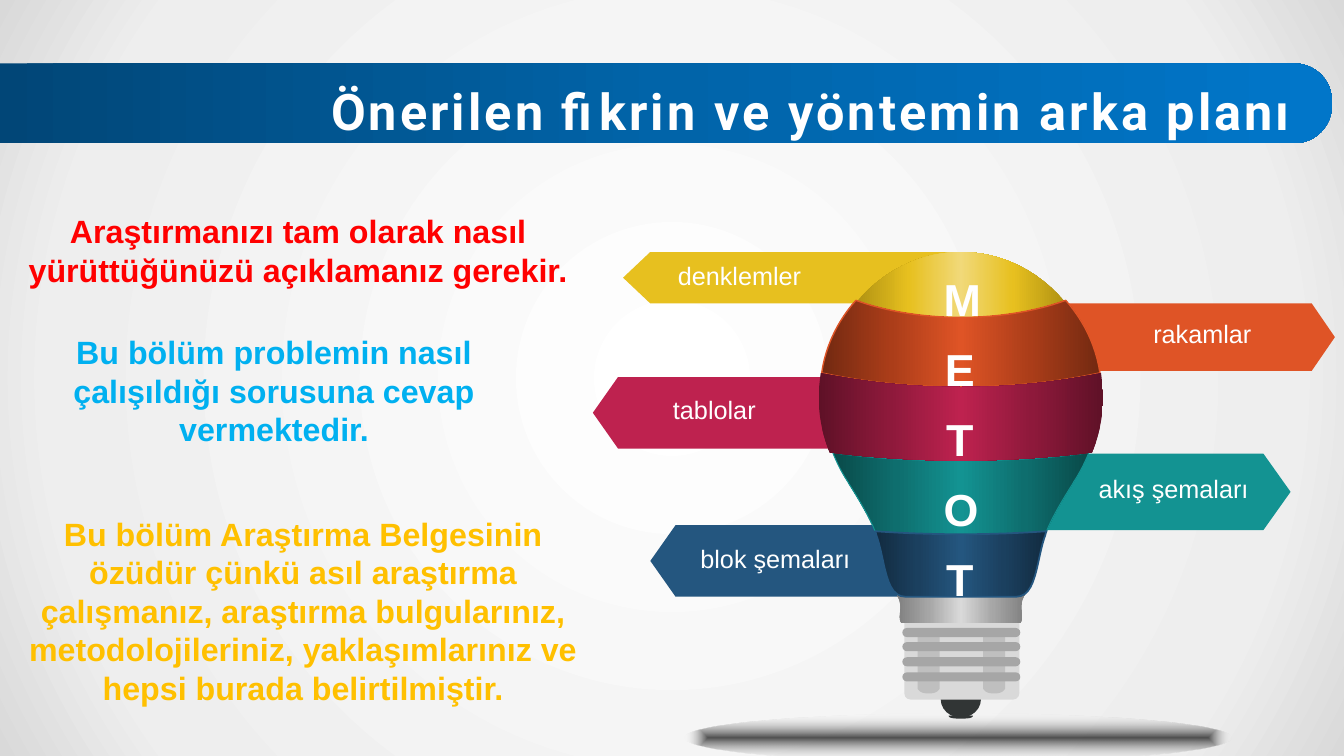
from dataclasses import dataclass
from itertools import pairwise
from typing import Any

from lxml import etree
from pptx import Presentation
from pptx import util as u
from pptx.dml.color import RGBColor
from pptx.enum import shapes, text
from pptx.oxml import ns

SCALE = 9144
AXIS = 953
WHITE = "FFFFFF"
Point = tuple[int, int]
Box = tuple[int, int, int, int]


@dataclass
class Stop:
    """One gradient stop in percent."""
    position: int
    color: str
    opacity: int = 100


@dataclass
class Tag:
    """An arrow label whose tip points away from the bulb."""
    caption: str
    color: str
    tip: int
    shoulder: int
    inner: int
    top: int
    bottom: int
    caption_box: Box


@dataclass
class Band:
    """A glossy bulb band: edge, middle and centre colours and its left half outline."""
    colors: tuple[str, str, str]
    half: list[Point]
    line_width: float = 0


@dataclass
class Statement:
    """A bold coloured paragraph on the left."""
    words: str
    color: str
    box: Box


TAGS = [
    Tag("denklemler", "E7C01F", 618, 645, 958, 250, 301, (625, 253, 217, 40)),
    Tag("tablolar", "BE224F", 588, 613, 876, 374, 445, (600, 386, 217, 40)),
    Tag("blok şemaları", "24567F", 645, 670, 894, 521, 592, (654, 534, 230, 40)),
    Tag("akış şemaları", "139392", 1280, 1253, 1018, 450, 526, (1049, 465, 230, 40)),
    Tag("rakamlar ", "DF5426", 1324, 1301, 1004, 301, 368, (1081, 311, 230, 40)),
]
STATEMENTS = [
    Statement("Bu bölüm problemin nasıl çalışıldığı sorusuna cevap vermektedir.",
              "00B0F0", (2, 325, 540, 126)),
    Statement("Araştırmanızı tam olarak nasıl yürüttüğünüzü açıklamanız gerekir.",
              "FF0000", (2, 205, 588, 88)),
    Statement("Bu bölüm Araştırma Belgesinin özüdür çünkü asıl araştırma çalışmanız, "
              "araştırma bulgularınız, metodolojileriniz, yaklaşımlarınız ve hepsi "
              "burada belirtilmiştir.", "FFC000", (1, 505, 600, 204)),
]
CAP = Band(("808080", "A6A6A6", "D9D9D9"), [
    (953, 592), (941, 592), (903, 590), (891, 587), (891, 587), (888, 588), (890, 592),
    (890, 592), (892, 593), (893, 601), (893, 609), (891, 614), (894, 618),
    (914, 618), (934, 618), (953, 618)])
BANDS = [
    Band(("B19313", "E7C01F", "F1D979"), [
        (953, 250), (911, 250), (875, 270), (850, 299), (877, 310), (914, 315), (953, 315)]),
    Band(("094A49", "0E6E6E", "139392"), [
        (953, 457), (909, 457), (866, 455), (826, 449), (830, 459), (835, 469), (841, 478),
        (841, 479), (859, 505), (868, 527), (896, 529), (925, 530), (953, 530)], 0.75),
    Band(("722911", "AB3D19", "DF5426"), [
        (953, 315), (913, 315), (876, 308), (849, 298), (832, 317), (819, 342), (815, 370),
        (856, 379), (903, 384), (953, 384)], 1),
    Band(("5F1127", "8E193B", "BE224F"), [
        (953, 384), (903, 384), (856, 379), (814, 370), (813, 378), (812, 386), (812, 394),
        (812, 414), (816, 432), (823, 449), (864, 454), (908, 457), (953, 457)]),
    Band(("122B40", "1B405F", "24567F"), [
        (953, 530), (925, 530), (896, 529), (868, 527), (869, 529), (869, 531), (870, 533),
        (878, 557), (878, 592), (898, 592), (916, 592), (935, 592), (953, 592)], 1.25),
]
CONTACT = [(953, 710), (949, 710), (945, 710), (941, 710), (941, 712), (944, 713), (953, 713)]
COLUMN = [(921, 628), (917, 628), (910, 628), (910, 630), (910, 650), (910, 670), (910, 683),
          (912, 687), (916, 688), (921, 688)]


def px(length: float) -> u.Emu:
    """Turn px into EMU."""
    return u.Emu(round(length * SCALE))


def rgb(color: str) -> RGBColor:
    """Turn a hex string into a colour."""
    return RGBColor.from_string(color)


def set_gradient(fill: Any, element: Any, stops: list[Stop], angle: int = 0,
                 spread: str = "") -> None:
    """Fill with a linear gradient, or one that spreads from the centre."""
    fill.gradient()
    gradient = next(element.iter(ns.qn("a:gradFill")))
    for child in list(gradient):
        gradient.remove(child)
    stop_list = etree.SubElement(gradient, ns.qn("a:gsLst"))
    for stop in stops:
        entry = etree.SubElement(stop_list, ns.qn("a:gs"), pos=str(stop.position * 1000))
        color = etree.SubElement(entry, ns.qn("a:srgbClr"), val=stop.color)
        if stop.opacity < 100:
            etree.SubElement(color, ns.qn("a:alpha"), val=str(stop.opacity * 1000))
    if spread:
        route = etree.SubElement(gradient, ns.qn("a:path"), {"path": spread})
        etree.SubElement(route, ns.qn("a:fillToRect"), dict.fromkeys("ltrb", "50000"))
    else:
        etree.SubElement(gradient, ns.qn("a:lin"), ang=str(angle * 60000), scaled="0")


def finish(shape: Any, color: str = "") -> Any:
    """Drop shadow and line, and set a plain fill if given."""
    shape.shadow.inherit = False
    shape.line.fill.background()
    if color:
        shape.fill.solid()
        shape.fill.fore_color.rgb = rgb(color)
    return shape


def add_preset(canvas: Any, kind: Any, box: Box, color: str = "",
               adjustments: tuple[float, ...] = ()) -> Any:
    """Add a preset shape."""
    shape = canvas.add_shape(kind, *map(px, box))
    for index, value in enumerate(adjustments):
        shape.adjustments[index] = value
    return finish(shape, color)


def add_outline(canvas: Any, points: list[tuple[float, float]], color: str = "") -> Any:
    """Add a closed polygon."""
    corners = [(px(x), px(y)) for x, y in points]
    builder = canvas.build_freeform(*corners[0], scale=1.0)
    builder.add_line_segments(corners[1:], close=True)
    return finish(builder.convert_to_shape(), color)


def mirrored_curve(half: list[Point], axis: int = AXIS, steps: int = 12) -> list[tuple[float, float]]:
    """Mirror a half outline of cubic curves and trace it with short lines."""
    controls = half + [(2 * axis - x, y) for x, y in reversed(half[:-1])]
    traced: list[tuple[float, float]] = [controls[0]]
    for start, end in pairwise(range(0, len(controls), 3)):
        for step in range(1, steps + 1):
            t = step / steps
            weights = ((1 - t) ** 3, 3 * t * (1 - t) ** 2, 3 * t * t * (1 - t), t ** 3)
            x, y = (sum(w * c for w, c in zip(weights, axis_values))
                    for axis_values in zip(*controls[start:end + 1]))
            traced.append((x, y))
    return traced


def add_words(canvas: Any, box: Box, lines: list[str], size: int, color: str = WHITE,
              bold: bool = False, font: str = "Arial",
              align: Any = text.PP_ALIGN.CENTER) -> Any:
    """Add a text box with one run per line."""
    shape = canvas.add_textbox(*map(px, box))
    frame = shape.text_frame
    frame.word_wrap = True
    frame.auto_size = text.MSO_AUTO_SIZE.SHAPE_TO_FIT_TEXT
    for index, line in enumerate(lines):
        paragraph = frame.add_paragraph() if index else frame.paragraphs[0]
        paragraph.alignment = align
        run = paragraph.add_run()
        run.text = line
        run.font.name, run.font.size, run.font.bold = font, u.Pt(size), bold
        run.font.color.rgb = rgb(color)
    return frame


def add_tag(canvas: Any, tag: Tag) -> None:
    """Draw an arrow label with its caption."""
    add_outline(canvas, [(tag.inner, tag.top), (tag.shoulder, tag.top),
                         (tag.tip, (tag.top + tag.bottom) / 2),
                         (tag.shoulder, tag.bottom), (tag.inner, tag.bottom)], tag.color)
    add_words(canvas, tag.caption_box, [tag.caption], 18)


def add_band(canvas: Any, band: Band) -> None:
    """Draw a glossy band, dark at both edges."""
    shape = add_outline(canvas, mirrored_curve(band.half))
    edge, middle, centre = band.colors
    stops = [Stop(25 * i, c) for i, c in enumerate((edge, middle, centre, middle, edge))]
    set_gradient(shape.fill, shape.element, stops)
    if band.line_width:
        shape.line.color.rgb = rgb(centre)
        shape.line.width = u.Pt(band.line_width)


def add_title(canvas: Any) -> None:
    """Draw the banner and the title on it."""
    banner = add_preset(canvas, shapes.MSO_SHAPE.ROUND_2_SAME_RECTANGLE,
                        (621, -558, 79, 1321), adjustments=(0.47, 0))
    banner.rotation = 90
    set_gradient(banner.fill, banner.element,
                 [Stop(0, "014677"), Stop(50, "0164A9"), Stop(100, "0176C9")], 270)
    frame = add_words(canvas, (56, 74, 1225, 71), ["Önerilen fikrin ve yöntemin arka planı"],
                      36, bold=True, font="Roboto", align=text.PP_ALIGN.RIGHT)
    frame.margin_left = frame.margin_right = 0
    frame.vertical_anchor = text.MSO_ANCHOR.MIDDLE
    frame.paragraphs[0].runs[0].font._element.set("spc", "220")


def add_bulb(canvas: Any) -> None:
    """Draw the bulb from its floor shadow up to the letters."""
    kinds = shapes.MSO_SHAPE
    floor = add_preset(canvas, kinds.OVAL, (679, 708, 542, 47))
    set_gradient(floor.fill, floor.element,
                 [Stop(0, "0D0D0D", 71), Stop(100, WHITE, 0)], spread="shape")
    add_outline(canvas, mirrored_curve(CONTACT), "313535")
    add_preset(canvas, kinds.OVAL, (933, 675, 40, 37), "313535")
    add_preset(canvas, kinds.ROUNDED_RECTANGLE, (897, 607, 114, 87), "D9D9D9", (0.07,))
    add_band(canvas, CAP)
    for shift in (0, 65):
        column = [(x + shift, y) for x, y in COLUMN]
        add_outline(canvas, mirrored_curve(column, column[0][0]), "BFBFBF")
    for rib in range(4):
        add_preset(canvas, kinds.ROUNDED_RECTANGLE, (895, 623 + 44 * rib // 3, 117, 9),
                   "A6A6A6", (0.5,))
    for band in BANDS:
        add_band(canvas, band)
    letters = add_words(canvas, (926, 249, 52, 353), list("METOT"), 32, bold=True)
    for paragraph in letters.paragraphs:
        paragraph.line_spacing = u.Pt(50)


def main() -> None:
    """Build and save the slide."""
    presentation = Presentation()
    presentation.slide_width, presentation.slide_height = px(1333), px(750)
    slide = presentation.slides.add_slide(presentation.slide_layouts[6])
    set_gradient(slide.background.fill, slide.element,
                 [Stop(0, WHITE), Stop(81, "EEEEEE"), Stop(100, "D9D9D9")], spread="circle")
    for tag in TAGS:
        add_tag(slide.shapes.add_group_shape().shapes, tag)
    add_title(slide.shapes)
    for statement in STATEMENTS:
        add_words(slide.shapes, statement.box, [statement.words], 23, statement.color, True)
    add_bulb(slide.shapes.add_group_shape().shapes)
    presentation.save("out.pptx")


if __name__ == "__main__":
    main()
